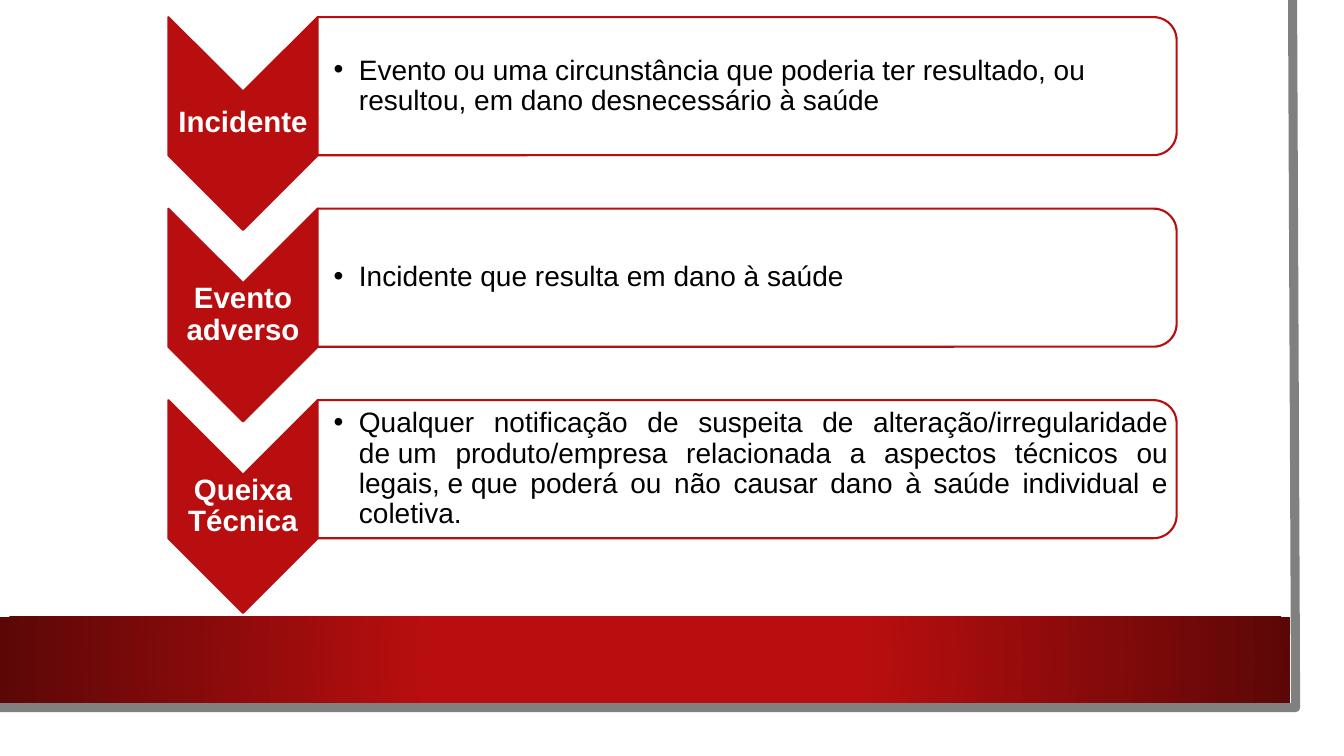
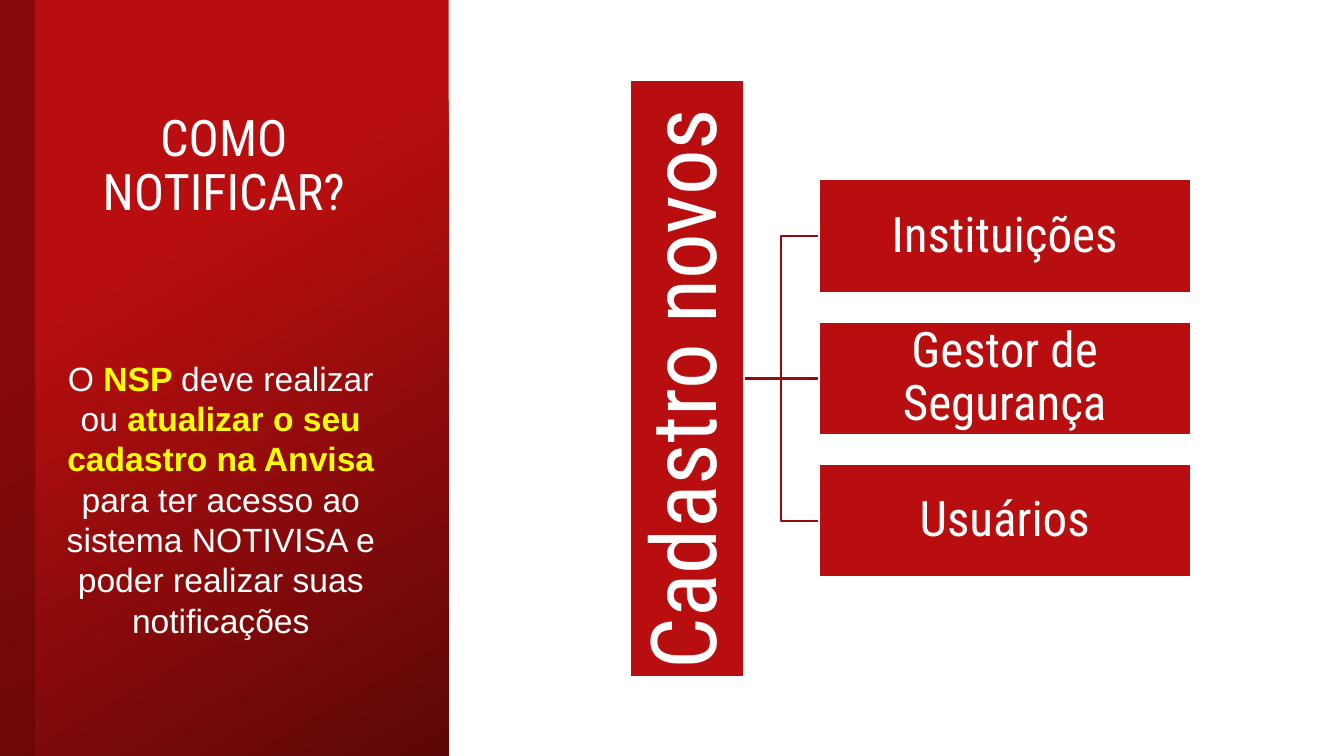
from pptx import Presentation
from pptx import util as u
from pptx.dml import color
from pptx.enum import shapes, text
from pptx.oxml import parse_xml
from pptx.oxml import ns

RED, DARK, LINE_RED = "B80E0F", "5C0707", "930B0C"
WHITE, BLACK, GREY, YELLOW = "FFFFFF", "000000", "808080", "FFFF00"
GRADIENT = [(0.34, RED), (1, DARK)]
CENTER, JUSTIFY, LEFT = text.PP_ALIGN.CENTER, text.PP_ALIGN.JUSTIFY, text.PP_ALIGN.LEFT
MIDDLE = text.MSO_ANCHOR.MIDDLE
SHAPE = shapes.MSO_SHAPE
NBSP = chr(160)

LABEL = {"name": "Arial", "size": u.Pt(21), "bold": True}
DETAIL = {"name": "Arial", "size": u.Pt(20)}
BODY = {"name": "Arial", "size": u.Pt(24)}
TITLE = {"name": "Roboto Condensed", "size": u.Pt(36)}
ROOT = {"name": "Roboto Condensed", "size": u.Pt(65)}
NODE = {"name": "Roboto Condensed", "size": u.Pt(35)}

DEFINITIONS = [
    ("Incidente", LEFT,
     "Evento ou uma circunstância que poderia ter resultado, ou resultou, "
     "em dano desnecessário à saúde"),
    ("Evento adverso", LEFT, "Incidente que resulta em dano à saúde"),
    ("Queixa Técnica", JUSTIFY,
     "Qualquer notificação de suspeita de alteração/irregularidade "
     f"de{NBSP}um produto/empresa relacionada a aspectos técnicos ou "
     f"legais,{NBSP}e{NBSP}que poderá ou não causar dano à saúde individual e coletiva."),
]
GUIDANCE = [
    ("O ", WHITE, False),
    ("NSP ", YELLOW, True),
    ("deve realizar ou ", WHITE, False),
    ("atualizar o seu cadastro na Anvisa ", YELLOW, True),
    ("para ter acesso ao sistema NOTIVISA e poder realizar suas notificações", WHITE, False),
]
REGISTRATIONS = ["Instituições", "Gestor de Segurança", "Usuários"]


def rgb(value):
    return color.RGBColor.from_string(value)


def inches(*values):
    return [u.Inches(v) for v in values]


def set_attrs(target, values):
    for name, value in values.items():
        setattr(target, name, value)


def outline(line, value, points):
    line.color.rgb = rgb(value)
    line.width = u.Pt(points)


def add_box(s, kind, x, y, w, h, fill=None, line=None, rotation=0):
    if rotation:
        x, y, w, h = x + (w - h) / 2, y + (h - w) / 2, h, w
    sp = s.shapes.add_shape(kind, *inches(x, y, w, h))
    sp.shadow.inherit = False
    sp.rotation = rotation
    if fill:
        sp.fill.solid()
        sp.fill.fore_color.rgb = rgb(fill)
    if line:
        outline(sp.line, line, 1.5)
    else:
        sp.line.fill.background()
    return sp


def set_gradient(sp, direction):
    sp.fill.gradient()
    for stop, (position, value) in zip(sp.fill.gradient_stops, GRADIENT):
        stop.position = position
        stop.color.rgb = rgb(value)
    grad = sp._element.spPr.find(ns.qn("a:gradFill"))
    grad.remove(grad.find(ns.qn("a:lin")))
    grad.append(parse_xml(direction.replace(" ", f' {ns.nsdecls("a")} ', 1)))


def write(tf, runs, style, inset=0.1, align=CENTER, spacing=0.9, anchor=MIDDLE, bullet=False):
    margins = {f"margin_{side}": u.Inches(inset) for side in ("left", "right", "top", "bottom")}
    set_attrs(tf, {"word_wrap": True, "auto_size": text.MSO_AUTO_SIZE.NONE,
                   "vertical_anchor": anchor, **margins})
    p = tf.paragraphs[0]
    set_attrs(p, {"alignment": align, "line_spacing": spacing})
    if bullet:
        pPr = p._p.get_or_add_pPr()
        pPr.set("marL", str(u.Inches(0.25)))
        pPr.set("indent", str(-u.Inches(0.25)))
        pPr.append(parse_xml(f'<a:buFont {ns.nsdecls("a")} typeface="Arial"/>'))
        pPr.append(parse_xml(f'<a:buChar {ns.nsdecls("a")} char="•"/>'))
    for content, value, bold in runs:
        r = p.add_run()
        r.text = content
        set_attrs(r.font, {"bold": bold, **style})
        r.font.color.rgb = rgb(value)


def add_text(s, x, y, w, h, runs, style, **layout):
    tf = s.shapes.add_textbox(*inches(x, y, w, h)).text_frame
    write(tf, runs, style, **layout)
    return tf


def add_frame(s, w, h):
    builder = s.shapes.build_freeform(u.Inches(w - 0.03), 0)
    builder.add_line_segments([inches(w, h), inches(0, h)], close=False)
    edge = builder.convert_to_shape()
    edge.shadow.inherit = False
    edge.fill.background()
    outline(edge.line, GREY, 6.5)
    band = add_box(s, SHAPE.RECTANGLE, 0, h - 0.9, w - 0.05, 0.85)
    set_gradient(band, '<a:path path="circle"><a:fillToRect l="50000" t="50000" '
                       'r="50000" b="50000"/></a:path>')


def add_definition(s, x, y, w, name, align, meaning):
    arrow_w, arrow_h, card_h = 1.48, 2.11, 1.37
    card_x = x + arrow_w
    add_box(s, SHAPE.CHEVRON, x, y, arrow_w, arrow_h, RED, RED, 90)
    add_text(s, x, y + arrow_w / 2, arrow_w, arrow_h - arrow_w, [(name, WHITE, True)],
             LABEL, inset=0.01)
    add_box(s, SHAPE.ROUND_2_SAME_RECTANGLE, card_x, y, w - arrow_w, card_h, WHITE, RED, 90)
    tf = add_text(s, card_x, y + 0.07, w - arrow_w - 0.07, card_h - 0.14,
                  [(meaning, BLACK, False)], DETAIL, inset=0.01, align=align, bullet=True)
    tf.margin_left = u.Inches(0.16)


def add_side_panel(s, w, h):
    panel = add_box(s, SHAPE.RECTANGLE, 0, 0, w, h)
    set_gradient(panel, '<a:lin ang="3600000" scaled="0"/>')
    strip = add_box(s, SHAPE.RECTANGLE, 0, 0, 0.35, h, DARK)
    fill = strip._element.spPr.find(ns.qn("a:solidFill"))
    fill[0].append(parse_xml(f'<a:alpha {ns.nsdecls("a")} val="50000"/>'))
    title = s.shapes.title
    places = inches(0.55, 0.3, w - 1.11, 2.72)
    set_attrs(title, dict(zip(("left", "top", "width", "height"), places)))
    s.shapes._spTree.append(title._element)
    write(title.text_frame, [("COMO NOTIFICAR?", WHITE, False)], TITLE)
    tf = add_text(s, 0.49, 3.5, w - 1.05, 2.93, GUIDANCE, BODY, spacing=1.0,
                  anchor=text.MSO_ANCHOR.TOP)
    set_attrs(tf, {"margin_top": u.Inches(0.05), "margin_bottom": u.Inches(0.05)})


def add_link(s, x1, y1, x2, y2):
    kind = shapes.MSO_CONNECTOR.STRAIGHT if y1 == y2 else shapes.MSO_CONNECTOR.ELBOW
    link = s.shapes.add_connector(kind, *inches(x1, y1, x2, y2))
    outline(link.line, LINE_RED, 1.5)
    link._element.spPr.append(parse_xml(f'<a:effectLst {ns.nsdecls("a")}/>'))


def add_hierarchy(s, x, y, w, h):
    root_w, gap, node_h, pitch = 1.13, 0.74, 1.13, 1.41
    node_x, middle = x + root_w + gap, y + h / 2
    centers = [middle + (i - 1) * pitch for i in range(len(REGISTRATIONS))]
    for center in centers:
        add_link(s, x + root_w, middle, node_x, center)
    root = add_box(s, SHAPE.RECTANGLE, x, y, root_w, h, RED, WHITE, 270)
    write(root.text_frame, [("Cadastro novos ", WHITE, False)], ROOT, inset=0.05)
    for name, center in zip(REGISTRATIONS, centers):
        node = add_box(s, SHAPE.RECTANGLE, node_x, center - node_h / 2,
                       w - root_w - gap, node_h, RED, WHITE)
        write(node.text_frame, [(name, WHITE, False)], NODE, inset=0.02)


def add_definitions_slide(prs):
    s = prs.slides.add_slide(prs.slide_layouts[6])
    add_frame(s, 12.85, 7.02)
    for i, definition in enumerate(DEFINITIONS):
        add_definition(s, 1.67, 0.17 + 1.9 * i, 10, *definition)


def add_registration_slide(prs):
    s = prs.slides.add_slide(prs.slide_layouts[5])
    add_side_panel(s, 4.45, 7.5)
    add_hierarchy(s, 6.25, 0.79, 5.56, 5.93)


def main():
    prs = Presentation()
    prs.slide_width, prs.slide_height = inches(13.33, 7.5)
    add_definitions_slide(prs)
    add_registration_slide(prs)
    prs.save("out.pptx")


if __name__ == "__main__":
    main()
